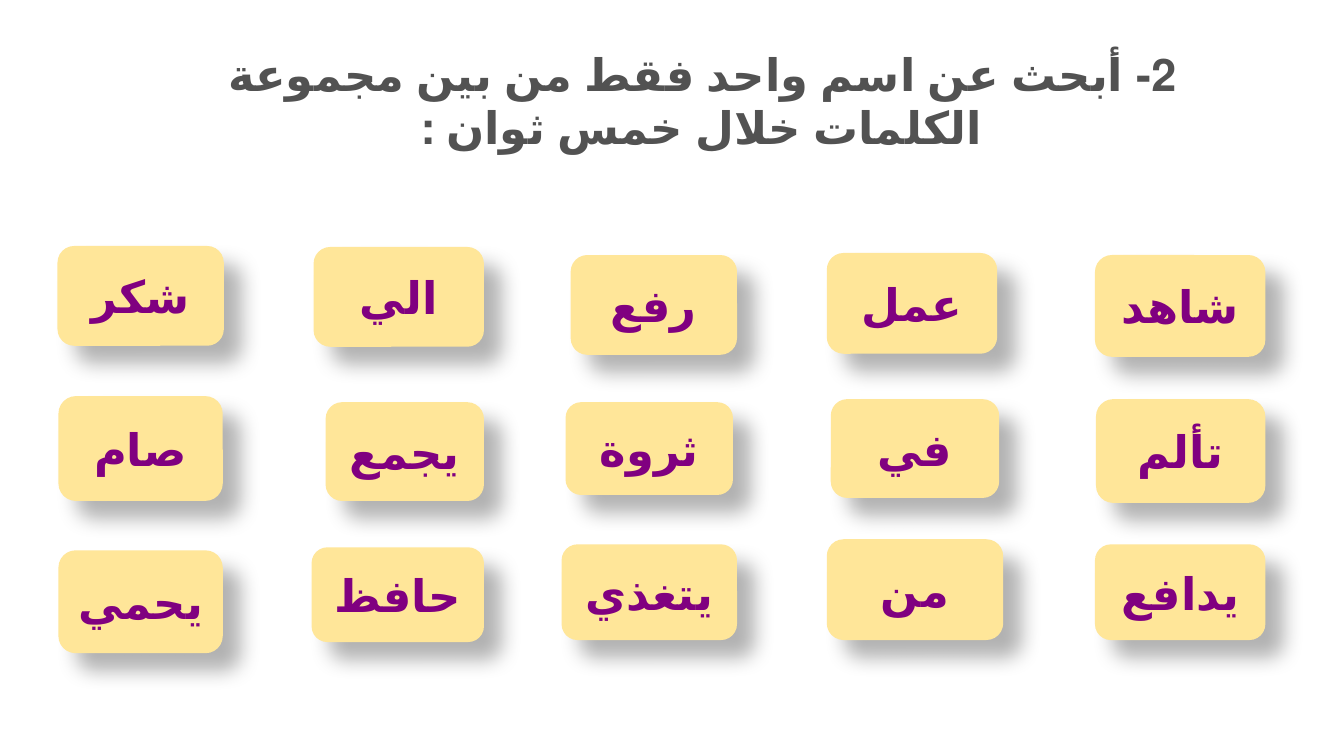
"""Builds an Arabic word-search slide with a heading and fifteen word cards."""
from lxml import etree
from pptx import Presentation
from pptx import util as u
from pptx.dml.color import RGBColor
from pptx.enum import shapes, text
from pptx.oxml import ns

EMU_PER_PX = 9144
COLORS = {"card": "FFE699", "word": "800080", "heading": "525252", "shadow": "000000"}

HEADING = "2- أبحث عن اسم واحد فقط من بين مجموعة الكلمات خلال خمس ثوان :"
CARD_ROWS = [
    [("شكر", 57, 244, 165, 99), ("الي", 311, 245, 169, 99), ("رفع", 566, 253, 165, 99),
     ("عمل", 820, 251, 169, 100), ("شاهد", 1086, 253, 169, 101)],
    [("صام", 58, 393, 163, 104), ("يجمع", 323, 399, 157, 98), ("ثروة", 561, 399, 166, 92),
     ("في", 824, 396, 167, 98), ("تألم", 1087, 396, 168, 103)],
    [("يحمي", 58, 546, 163, 102), ("حافظ", 309, 543, 171, 94), ("يتغذي", 557, 540, 174, 95),
     ("من", 820, 535, 175, 100), ("يدافع", 1086, 540, 169, 95)],
]


def px(length):
    return u.Emu(length * EMU_PER_PX)


def write_text(frame, content, color, size=32, font="Calibri", bold=True,
               anchor=text.MSO_ANCHOR.MIDDLE):
    frame.word_wrap = True
    frame.auto_size = text.MSO_AUTO_SIZE.NONE
    frame.vertical_anchor = anchor
    paragraph = frame.paragraphs[0]
    paragraph.alignment = text.PP_ALIGN.CENTER
    paragraph.line_spacing = 1.0
    paragraph._p.get_or_add_pPr().set("rtl", "1")
    run = paragraph.add_run()
    run.text = content
    run.font.size = u.Pt(size)
    run.font.name = font
    run.font.bold = bold
    run.font.color.rgb = RGBColor.from_string(COLORS[color])
    run.font.language_id = None
    run._r.get_or_add_rPr().set("lang", "ar-SA")


class SlideBuilder:
    def __init__(self, presentation):
        self.slide = presentation.slides.add_slide(presentation.slide_layouts[5])

    def heading(self, content, left, top, width, height):
        title = self.slide.shapes.title
        title.left, title.top = px(left), px(top)
        title.width, title.height = px(width), px(height)
        write_text(title.text_frame, content, "heading", anchor=text.MSO_ANCHOR.TOP)

    def card(self, word, left, top, width, height):
        shape = self.slide.shapes.add_shape(
            shapes.MSO_SHAPE.ROUNDED_RECTANGLE, px(left), px(top), px(width), px(height))
        shape.fill.solid()
        shape.fill.fore_color.rgb = RGBColor.from_string(COLORS["card"])
        shape.line.fill.background()
        self.drop_shadow(shape)
        write_text(shape.text_frame, word, "word")

    def drop_shadow(self, shape, blur=15, distance=18, angle=45, opacity=30):
        shape.shadow.inherit = False
        effects = shape._element.spPr.find(ns.qn("a:effectLst"))
        shadow = etree.SubElement(
            effects, ns.qn("a:outerShdw"), blurRad=str(u.Pt(blur)), dist=str(u.Pt(distance)),
            dir=str(angle * 60000), algn="tl", rotWithShape="0")
        color = etree.SubElement(shadow, ns.qn("a:srgbClr"), val=COLORS["shadow"])
        etree.SubElement(color, ns.qn("a:alpha"), val=str(opacity * 1000))


def main():
    presentation = Presentation()
    presentation.slide_width, presentation.slide_height = px(1333), px(750)
    builder = SlideBuilder(presentation)
    builder.heading(HEADING, 160, 41, 1073, 64)
    for row in CARD_ROWS:
        for card in row:
            builder.card(*card)
    presentation.save("out.pptx")


if __name__ == "__main__":
    main()
